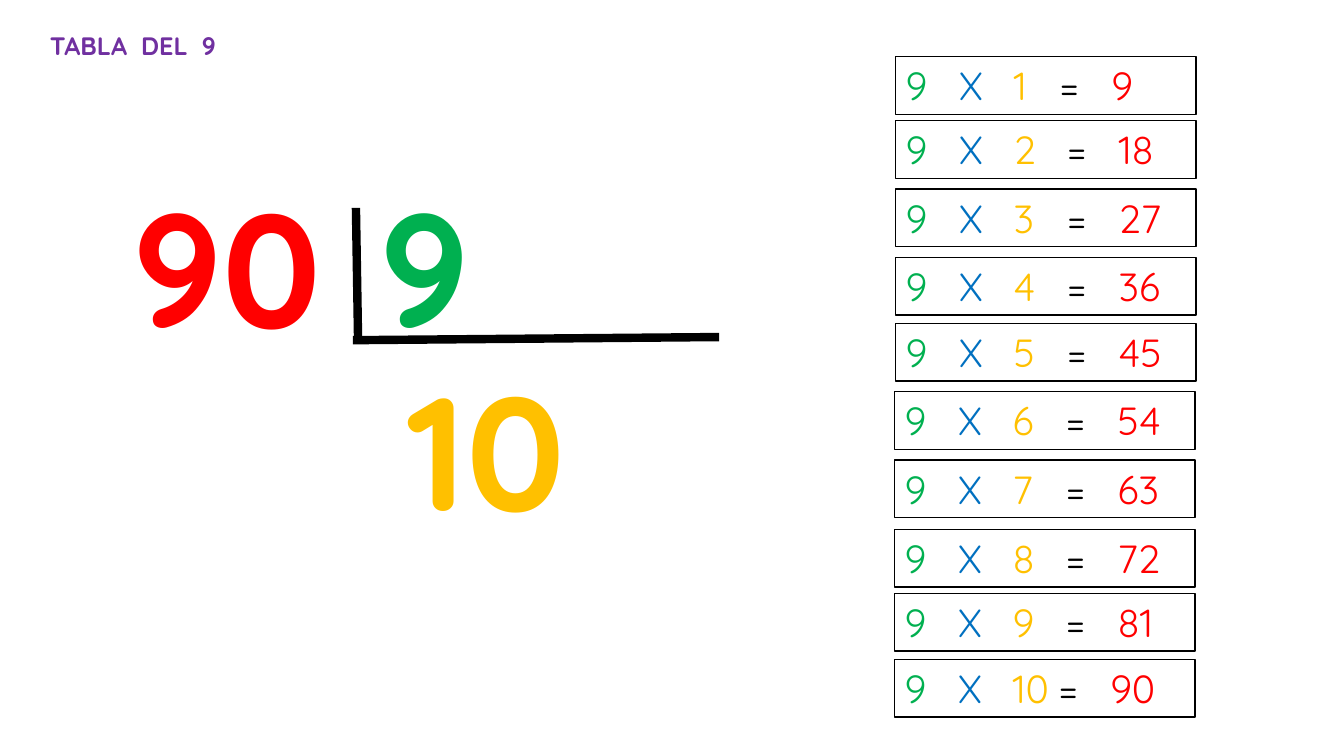
from lxml.etree import SubElement
from pptx import Presentation
from pptx.dml.color import RGBColor
from pptx.enum.shapes import MSO_CONNECTOR as Connector, MSO_SHAPE as Shape
from pptx.enum.text import MSO_ANCHOR as Anchor, MSO_AUTO_SIZE as AutoSize, PP_ALIGN as Align
from pptx.oxml.ns import qn
from pptx.util import Pt

PX = 9525
FONT = "Quicksand"
GREEN = RGBColor(0x00, 0xB0, 0x50)
BLUE = RGBColor(0x00, 0x70, 0xC0)
GOLD = RGBColor(0xFF, 0xC0, 0x00)
RED = RGBColor(0xFF, 0x00, 0x00)
PURPLE = RGBColor(0x70, 0x30, 0xA0)
BLACK = RGBColor(0x00, 0x00, 0x00)
WHITE = RGBColor(0xFF, 0xFF, 0xFF)


def write(shape, runs, size, bold=False, align=Align.LEFT, tabs=()):
    frame = shape.text_frame
    frame.word_wrap = True
    frame.auto_size = AutoSize.SHAPE_TO_FIT_TEXT
    frame.vertical_anchor = Anchor.TOP
    paragraph = frame.paragraphs[0]
    paragraph.alignment = align
    if tabs:
        stops = SubElement(paragraph._p.get_or_add_pPr(), qn("a:tabLst"))
        for position in tabs:
            SubElement(stops, qn("a:tab"), pos=str(position * PX), algn="l")
    for text, color in runs:
        run = paragraph.add_run()
        run.text = text
        run.font.name = FONT
        run.font.size = Pt(size)
        run.font.bold = bold
        run.font.color.rgb = color


deck = Presentation()
deck.slide_width = 1280 * PX
deck.slide_height = 720 * PX
slide = deck.slides.add_slide(deck.slide_layouts[6])

title = slide.shapes.add_textbox(38 * PX, 24 * PX, 252 * PX, 38 * PX)
write(title, [("TABLA\tDEL\t9", PURPLE)], 18, bold=True, tabs=(87, 145))

division = [
    ("90", RED, 114, 155, 205),
    ("9", GREEN, 348, 155, 113),
    ("10", GOLD, 356, 329, 214),
]
for number, color, left, top, width in division:
    term = slide.shapes.add_textbox(left * PX, top * PX, width * PX, 196 * PX)
    write(term, [(number, color)], 115, bold=True, align=Align.CENTER)

bracket = slide.shapes.add_group_shape()
for ends in [(339, 198, 341, 322), (336, 324, 685, 321)]:
    stroke = bracket.shapes.add_connector(Connector.STRAIGHT, *(end * PX for end in ends))
    stroke.line.color.rgb = BLACK
    stroke.line.width = Pt(6)
    SubElement(stroke._element.spPr, qn("a:effectLst"))

row_tops = [54, 115, 180, 245, 308, 373, 438, 504, 565, 628]
for factor, top in enumerate(row_tops, start=1):
    left = 853 if factor <= 5 else 852
    row = slide.shapes.add_shape(Shape.RECTANGLE, left * PX, top * PX, 286 * PX, 55 * PX)
    row.shadow.inherit = False
    row.fill.solid()
    row.fill.fore_color.rgb = WHITE
    row.line.color.rgb = BLACK
    row.line.width = Pt(1)
    product = [
        ("9\t", GREEN),
        ("X\t", BLUE),
        (f"{factor}\t", GOLD),
        ("=\t", BLACK),
        (str(9 * factor), RED),
    ]
    equals = 147 if factor in (1, 10) else 154
    write(row, product, 28, tabs=(51, 103, equals, equals + 49))

deck.save("out.pptx")
